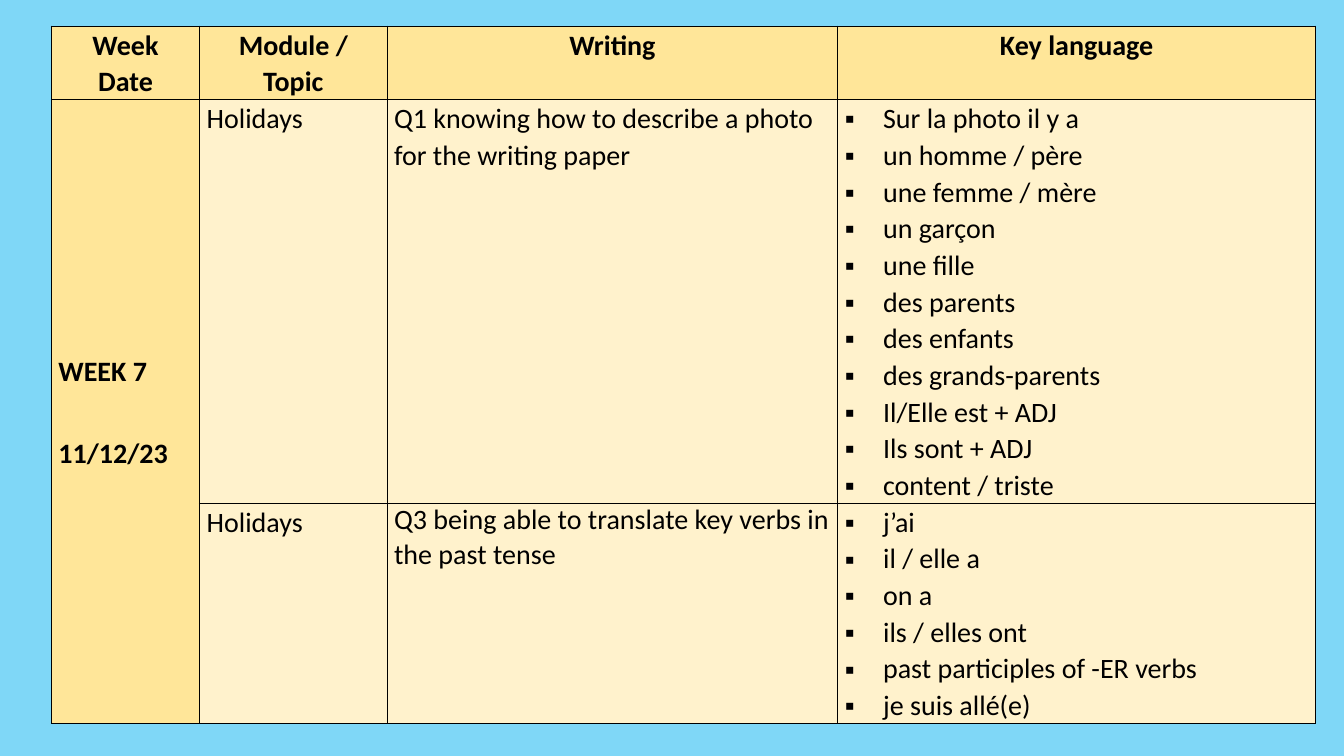
from lxml.etree import SubElement
from pptx import Presentation
from pptx.dml.color import RGBColor
from pptx.enum.text import MSO_ANCHOR, PP_ALIGN
from pptx.oxml import parse_xml
from pptx.oxml.ns import nsdecls, qn
from pptx.util import Inches, Pt

COLOURS = {"background": "7FD7F7", "heading": "FFE699", "body": "FFF2CC", "ink": "000000"}
FONT = "Calibri"
LINE_SPACING = 1.07
COLUMN_WIDTHS = [1.47, 1.86, 4.47, 4.74]
ROW_HEIGHTS = [0.73, 4.0, 2.18]
HEADINGS = ["Week\vDate", "Module / Topic", "Writing", "Key language"]
LESSONS = [
    ("Holidays", "Q1 knowing how to describe a photo for the writing paper", LINE_SPACING,
     ["Sur la photo il y a", "un homme / père", "une femme / mère", "un garçon", "une fille",
      "des parents", "des enfants", "des grands-parents", "Il/Elle est + ADJ",
      "Ils sont + ADJ", "content / triste"]),
    ("Holidays", "Q3 being able to translate key verbs in the past tense", 1.0,
     ["j’ai", "il / elle a", "on a", "ils / elles ont", "past participles of -ER verbs",
      "je suis allé(e)"]),
]


def colour(name):
    return RGBColor.from_string(COLOURS[name])


def add_borders(cell):
    properties = cell._tc.get_or_add_tcPr()
    for position, side in enumerate(["lnL", "lnR", "lnT", "lnB"]):
        border = parse_xml(
            f'<a:{side} {nsdecls("a")} w="{Pt(1)}"><a:solidFill>'
            f'<a:srgbClr val="{COLOURS["ink"]}"/></a:solidFill></a:{side}>')
        properties.insert(position, border)


def style_cell(cell, fill):
    cell.margin_left = cell.margin_right = Inches(0.07)
    cell.margin_top = cell.margin_bottom = 0
    cell.fill.solid()
    cell.fill.fore_color.rgb = colour(fill)
    add_borders(cell)


def add_bullet(paragraph):
    properties = paragraph._p.get_or_add_pPr()
    properties.set("marL", str(Inches(0.38)))
    properties.set("indent", str(Inches(-0.38)))
    SubElement(properties, qn("a:buFont")).set("typeface", "Arial")
    SubElement(properties, qn("a:buChar")).set("char", "▪")


def write_cell(cell, texts, bold=False, align=PP_ALIGN.LEFT, spacing=LINE_SPACING,
               gap=0, bullets=False):
    frame = cell.text_frame
    for index, text in enumerate(texts):
        paragraph = frame.add_paragraph() if index else frame.paragraphs[0]
        if bullets:
            add_bullet(paragraph)
        paragraph.alignment = align
        paragraph.line_spacing = spacing
        paragraph.space_after = Pt(gap if index < len(texts) - 1 else 0)
        for part, line in enumerate(text.split("\v")):
            if part:
                paragraph.add_line_break()
            run = paragraph.add_run()
            run.text = line
            run.font.name = FONT
            run.font.size = Pt(20)
            run.font.bold = bold
            run.font.color.rgb = colour("ink")


def add_plan_table(slide):
    frame = slide.shapes.add_table(
        len(ROW_HEIGHTS), len(COLUMN_WIDTHS), Inches(0.51), Inches(0.26),
        Inches(sum(COLUMN_WIDTHS)), Inches(sum(ROW_HEIGHTS)))
    table = frame.table
    table.first_row = table.horz_banding = False
    for column, width in zip(table.columns, COLUMN_WIDTHS):
        column.width = Inches(width)
    for row_index, (row, height) in enumerate(zip(table.rows, ROW_HEIGHTS)):
        row.height = Inches(height)
        for column_index, cell in enumerate(row.cells):
            style_cell(cell, "body" if row_index and column_index else "heading")
    return table


def fill_plan_table(table):
    for column, heading in enumerate(HEADINGS):
        write_cell(table.cell(0, column), [heading], bold=True, align=PP_ALIGN.CENTER)
    week = table.cell(1, 0)
    week.merge(table.cell(len(LESSONS), 0))
    week.vertical_anchor = MSO_ANCHOR.MIDDLE
    write_cell(week, ["WEEK 7", "11/12/23"], bold=True, gap=32)
    for row, (topic, writing, spacing, phrases) in enumerate(LESSONS, start=1):
        write_cell(table.cell(row, 1), [topic])
        write_cell(table.cell(row, 2), [writing], spacing=spacing)
        write_cell(table.cell(row, 3), phrases, bullets=True)


def main():
    presentation = Presentation()
    presentation.slide_width = Inches(13.33)
    presentation.slide_height = Inches(7.5)
    slide = presentation.slides.add_slide(presentation.slide_layouts[6])
    slide.background.fill.solid()
    slide.background.fill.fore_color.rgb = colour("background")
    fill_plan_table(add_plan_table(slide))
    presentation.save("out.pptx")


if __name__ == "__main__":
    main()
